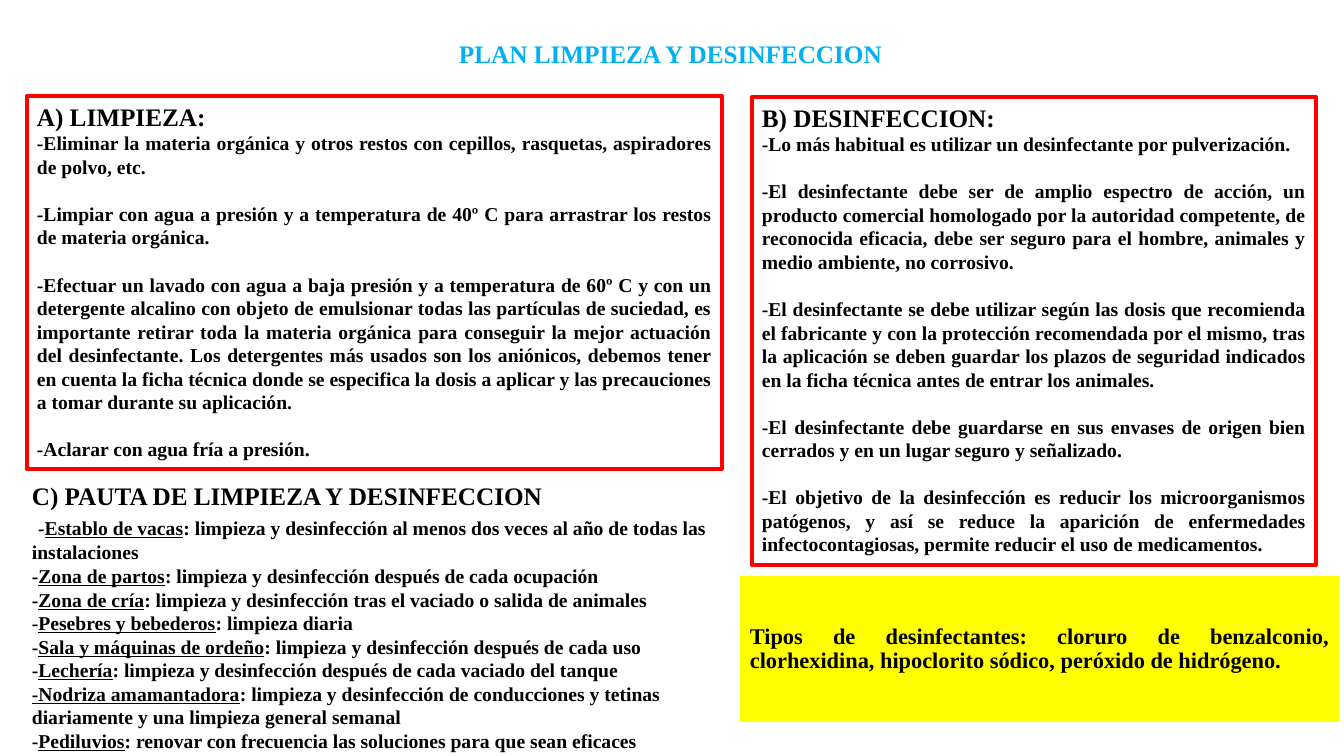
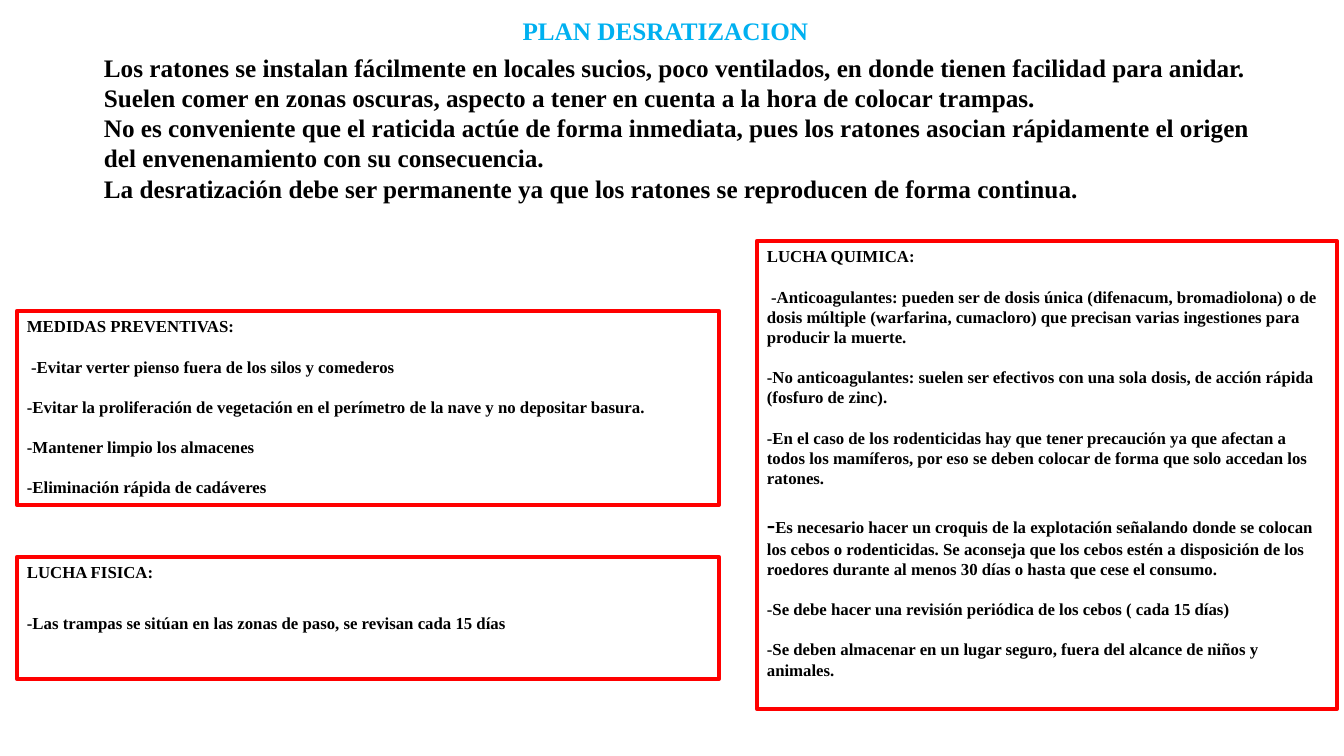
from dataclasses import dataclass

from pptx import Presentation
from pptx import util as u
from pptx.dml.color import RGBColor
from pptx.enum import shapes, text

SLIDE_WIDTH, SLIDE_HEIGHT = 1344, 756
EMU_PER_PX = 12192000 / SLIDE_WIDTH
FONT = "Times New Roman"
BLACK, CYAN, RED, YELLOW = "000000", "00B0F0", "FF0000", "FFFF00"
HEADING, BODY, SMALL = 18, 14, 12
LINE_HEIGHT = 1.2
LEFT, CENTER, JUSTIFY = text.PP_ALIGN.LEFT, text.PP_ALIGN.CENTER, text.PP_ALIGN.JUSTIFY

CLEANING = [
    "-Eliminar la materia orgánica y otros restos con cepillos, rasquetas, aspiradores de polvo, etc.",
    "-Limpiar con agua a presión y a temperatura de 40º C para arrastrar los restos de materia orgánica.",
    "-Efectuar un lavado con agua a baja presión y a temperatura de 60º C y con un detergente alcalino con "
    "objeto de emulsionar todas las partículas de suciedad, es importante retirar toda la materia orgánica "
    "para conseguir la mejor actuación del desinfectante. Los detergentes más usados son los aniónicos, "
    "debemos tener en cuenta la ficha técnica donde se especifica la dosis a aplicar y las precauciones a "
    "tomar durante su aplicación.",
    "-Aclarar con agua fría a presión.",
]
DISINFECTION = [
    "-Lo más habitual es utilizar un desinfectante por pulverización.",
    "-El desinfectante debe ser de amplio espectro de acción, un producto comercial homologado por la "
    "autoridad competente, de reconocida eficacia, debe ser seguro para el hombre, animales y medio "
    "ambiente, no corrosivo.",
    "-El desinfectante se debe utilizar según las dosis que recomienda el fabricante y con la protección "
    "recomendada por el mismo, tras la aplicación se deben guardar los plazos de seguridad indicados en la "
    "ficha técnica antes de entrar los animales.",
    "-El desinfectante debe guardarse en sus envases de origen bien cerrados y en un lugar seguro y señalizado.",
    "-El objetivo de la desinfección es reducir los microorganismos patógenos, y así se reduce la aparición "
    "de enfermedades infectocontagiosas, permite reducir el uso de medicamentos.",
]
SCHEDULE = [
    ("-", "Establo de vacas", "limpieza y desinfección al menos dos veces al año de todas las instalaciones"),
    ("-", "Zona de partos", "limpieza y desinfección después de cada ocupación"),
    ("-", "Zona de cría", "limpieza y desinfección tras el vaciado o salida de animales"),
    ("-", "Pesebres y bebederos", "limpieza diaria"),
    ("-", "Sala y máquinas de ordeño", "limpieza y desinfección después de cada uso"),
    ("-", "Lechería", "limpieza y desinfección después de cada vaciado del tanque"),
    ("", "-Nodriza amamantadora",
     "limpieza y desinfección de conducciones y tetinas diariamente y una limpieza general semanal"),
    ("-", "Pediluvios", "renovar con frecuencia las soluciones para que sean eficaces"),
]
DISINFECTANTS = ("Tipos de desinfectantes: cloruro de benzalconio, clorhexidina, hipoclorito sódico, "
                 "peróxido de hidrógeno.")
MICE = [
    "Los ratones se instalan fácilmente en locales sucios, poco ventilados, en donde tienen facilidad para "
    "anidar. Suelen comer en zonas oscuras, aspecto a tener en cuenta a la hora de colocar trampas.",
    "No es conveniente que el raticida actúe de forma inmediata, pues los ratones asocian rápidamente el "
    "origen del envenenamiento con su consecuencia.",
    "La desratización debe ser permanente ya que los ratones se reproducen de forma continua.",
]
PREVENTION = [
    "MEDIDAS PREVENTIVAS:",
    " -Evitar verter pienso fuera de los silos y comederos",
    "-Evitar la proliferación de vegetación en el perímetro de la nave y no depositar basura.",
    "-Mantener limpio los almacenes",
    "-Eliminación rápida de cadáveres",
]
TRAPS = ["LUCHA FISICA:", "-Las trampas se sitúan en las zonas de paso, se revisan cada 15 días"]
CHEMICAL_START = [
    "LUCHA QUIMICA:",
    " -Anticoagulantes: pueden ser de dosis única (difenacum, bromadiolona) o de dosis múltiple (warfarina, "
    "cumacloro) que precisan varias ingestiones para producir la muerte.",
    "-No anticoagulantes: suelen ser efectivos con una sola dosis, de acción rápida (fosfuro de zinc).",
    "-En el caso de los rodenticidas hay que tener precaución ya que afectan a todos los mamíferos, por eso "
    "se deben colocar de forma que solo accedan los ratones.",
]
SITE_SKETCH = ("Es necesario hacer un croquis de la explotación señalando donde se colocan los cebos o "
               "rodenticidas. Se aconseja que los cebos estén a disposición de los roedores durante al menos "
               "30 días o hasta que cese el consumo.")
CHEMICAL_END = [
    "-Se debe hacer una revisión periódica de los cebos ( cada 15 días)",
    "-Se deben almacenar en un lugar seguro, fuera del alcance de niños y animales.",
]


@dataclass
class Run:
    words: str
    size: int
    underline: bool = False
    color: str = BLACK


@dataclass
class Para:
    runs: list
    gap: float = 0
    align: int = LEFT
    spacing: float = 1.0


def px(length):
    return u.Emu(round(length * EMU_PER_PX))


def rgb(color):
    return RGBColor.from_string(color)


def blank_line(size):
    return round(size * LINE_HEIGHT, 1)


def write(frame, paras, anchor=text.MSO_ANCHOR.TOP):
    frame.word_wrap = True
    frame.auto_size = text.MSO_AUTO_SIZE.NONE
    frame.vertical_anchor = anchor
    for index, para in enumerate(paras):
        line = frame.add_paragraph() if index else frame.paragraphs[0]
        line.alignment = para.align
        line.line_spacing = para.spacing
        line.space_before = u.Pt(para.gap)
        for part in para.runs:
            run = line.add_run()
            run.text = part.words
            run.font.name = FONT
            run.font.size = u.Pt(part.size)
            run.font.bold = True
            run.font.underline = part.underline
            run.font.color.rgb = rgb(part.color)


def heading(words):
    return Para([Run(words, HEADING)])


def spaced(items, size, align=LEFT, gap=None, first_gap=0):
    gap = blank_line(size) if gap is None else gap
    return [Para([Run(item, size)], gap if index else first_gap, align)
            for index, item in enumerate(items)]


def titled_slide(deck, words, left, top):
    slide = deck.slides.add_slide(deck.slide_layouts[5])
    title = slide.shapes.title
    title.left, title.top, title.width, title.height = map(px, (left, top, 1159, 62))
    write(title.text_frame, [Para([Run(words, HEADING, color=CYAN)], align=CENTER, spacing=0.9)],
          text.MSO_ANCHOR.MIDDLE)
    return slide


def panel(slide, box, paras, fill=None, outline=None, anchor=text.MSO_ANCHOR.TOP):
    block = slide.shapes.add_shape(shapes.MSO_SHAPE.RECTANGLE, *map(px, box))
    block.shadow.inherit = False
    if fill:
        block.fill.solid()
        block.fill.fore_color.rgb = rgb(fill)
    else:
        block.fill.background()
    if outline:
        block.line.color.rgb = rgb(outline)
        block.line.width = u.Pt(3)
    else:
        block.line.fill.background()
    write(block.text_frame, paras, anchor)


def plain_text(slide, box, paras):
    write(slide.shapes.add_textbox(*map(px, box)).text_frame, paras)


def schedule_paras():
    paras = [Para([Run(dash, BODY), Run(place, BODY, True), Run(": " + task, BODY)])
             if dash else Para([Run(place, BODY, True), Run(": " + task, BODY)])
             for dash, place, task in SCHEDULE]
    paras[0].runs.insert(0, Run(" ", HEADING))
    return paras


def cleaning_slide(deck):
    slide = titled_slide(deck, "PLAN LIMPIEZA Y DESINFECCION", 91, 24)
    panel(slide, (740, 576, 599, 146),
          [Para([Run(DISINFECTANTS, 16)], align=JUSTIFY, spacing=0.9)],
          fill=YELLOW, anchor=text.MSO_ANCHOR.MIDDLE)
    panel(slide, (27, 96, 695, 373),
          [heading("A) LIMPIEZA:")] + spaced(CLEANING, BODY, JUSTIFY), outline=RED)
    panel(slide, (752, 97, 564, 468),
          [heading("B) DESINFECCION:")] + spaced(DISINFECTION, BODY, JUSTIFY), outline=RED)
    plain_text(slide, (22, 475, 714, 280),
               [heading("C) PAUTA DE LIMPIEZA Y DESINFECCION")] + schedule_paras())


def rodent_slide(deck):
    slide = titled_slide(deck, "PLAN DESRATIZACION", 86, 1)
    plain_text(slide, (94, 47, 1186, 194), spaced(MICE, HEADING, gap=0))
    panel(slide, (17, 311, 702, 194), spaced(PREVENTION, SMALL), outline=RED)
    gap = blank_line(SMALL)
    sketch = Para([Run("-", HEADING), Run(SITE_SKETCH, SMALL)], gap)
    panel(slide, (757, 241, 580, 468),
          spaced(CHEMICAL_START, SMALL) + [sketch] + spaced(CHEMICAL_END, SMALL, first_gap=gap),
          outline=RED)
    panel(slide, (17, 557, 702, 122), spaced(TRAPS, SMALL, gap=blank_line(HEADING)), outline=RED)


def main():
    deck = Presentation()
    deck.slide_width, deck.slide_height = px(SLIDE_WIDTH), px(SLIDE_HEIGHT)
    cleaning_slide(deck)
    rodent_slide(deck)
    deck.save("out.pptx")


if __name__ == "__main__":
    main()
